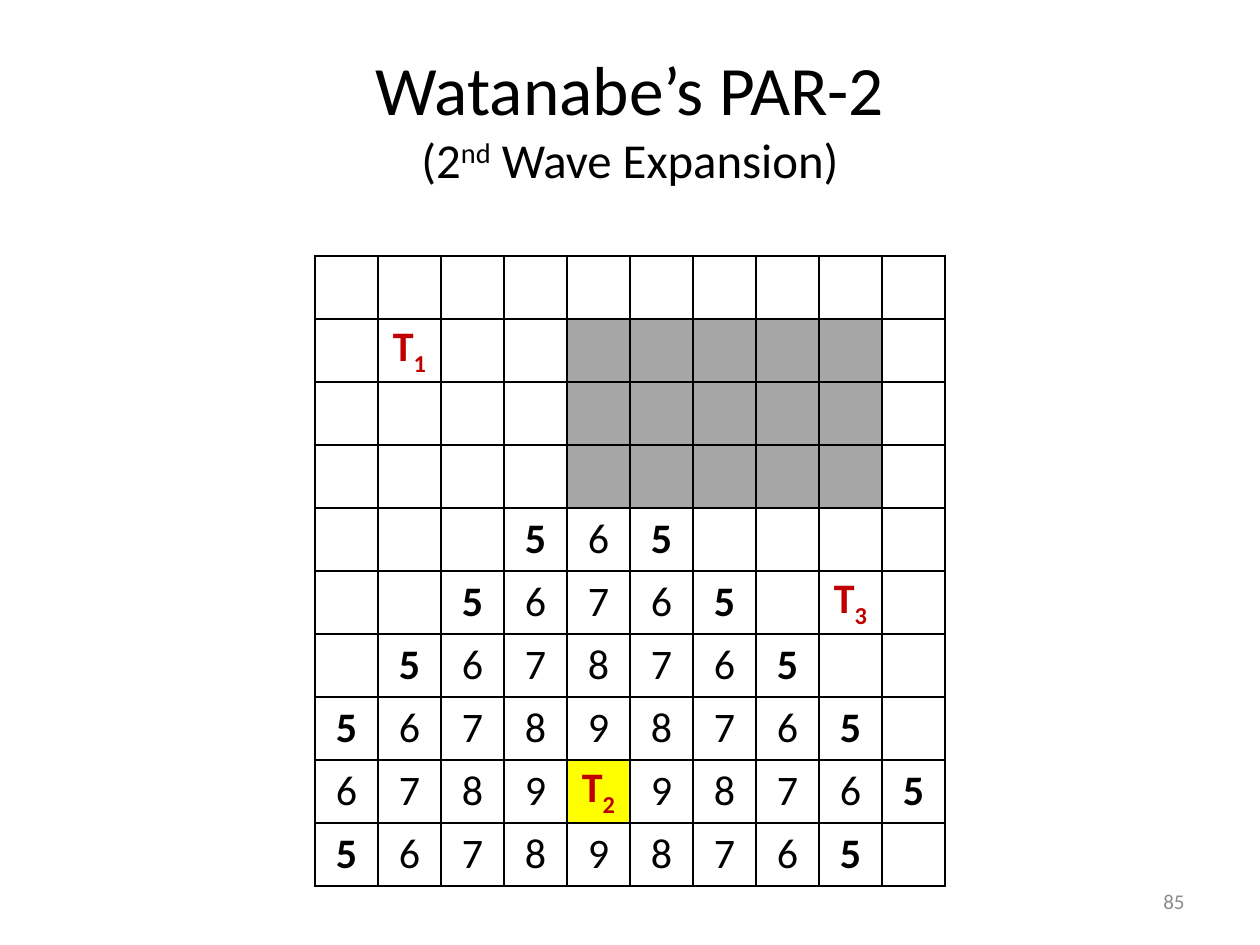
from lxml import etree
from pptx import Presentation
from pptx import util as u
from pptx.dml.color import RGBColor
from pptx.enum import text
from pptx.oxml.ns import qn

PX = u.Inches(1) / 126
FONT = "Calibri"
COLORS = {
    "ink": "000000",
    "terminal": "C00000",
    "free": "FFFFFF",
    "blocked": "A6A6A6",
    "source": "FFFF00",
    "number": "8C8C8C",
}
SIZE = 10
WAVE_START = 10
WAVE_FRONT = 5
SOURCE = (8, 4)
TERMINALS = {(1, 1): "1", SOURCE: "2", (5, 8): "3"}
BLOCKED_ROWS = range(1, 4)
BLOCKED_COLUMNS = range(4, 9)


def px(length):
    """Turn whole px into EMU."""
    return u.Emu(round(length * PX))


def add_span(para, words, size, color="ink", bold=False, baseline=0):
    """Append a formatted run; baseline is a percentage shift."""
    span = para.add_run()
    span.text = words
    span.font.name = FONT
    span.font.size = u.Pt(size)
    span.font.bold = bold
    span.font.color.rgb = RGBColor.from_string(COLORS[color])
    if baseline:
        span._r.get_or_add_rPr().set("baseline", str(baseline * 1000))


def add_text_box(page, box, align):
    """Place a wrapped, vertically centred text box and return its paragraph."""
    frame = page.shapes.add_textbox(*map(px, box)).text_frame
    frame.word_wrap = True
    frame.vertical_anchor = text.MSO_ANCHOR.MIDDLE
    para = frame.paragraphs[0]
    para.alignment = align
    return para


def add_title(page, box):
    """Write the title and its smaller second line."""
    para = add_text_box(page, box, text.PP_ALIGN.CENTER)
    add_span(para, "Watanabe’s PAR-2", 39.6)
    para.add_line_break()
    add_span(para, "(2", 27.9)
    add_span(para, "nd", 27.9, baseline=30)
    add_span(para, " Wave Expansion)", 27.9)


def add_page_number(page, box):
    """Write the page number."""
    para = add_text_box(page, box, text.PP_ALIGN.RIGHT)
    add_span(para, "85", 12, "number")


def add_borders(cell):
    """Draw a solid line on each side of a cell."""
    properties = cell._tc.get_or_add_tcPr()
    for side in ("lnL", "lnR", "lnT", "lnB"):
        line = etree.SubElement(properties, qn(f"a:{side}"), w=str(u.Pt(1.5)))
        fill = etree.SubElement(line, qn("a:solidFill"))
        etree.SubElement(fill, qn("a:srgbClr"), val=COLORS["ink"])


def is_blocked(row, column):
    """Tell whether a cell belongs to the obstacle."""
    return row in BLOCKED_ROWS and column in BLOCKED_COLUMNS


def fill_name(row, column):
    """Choose the fill of a cell."""
    if (row, column) == SOURCE:
        return "source"
    return "blocked" if is_blocked(row, column) else "free"


def write_cell(para, row, column):
    """Write a terminal or the wave value, which drops with distance."""
    value = WAVE_START - abs(row - SOURCE[0]) - abs(column - SOURCE[1])
    if (row, column) in TERMINALS:
        add_span(para, "T", 24, "terminal", True)
        add_span(para, TERMINALS[row, column], 24, "terminal", True, -25)
    elif value >= WAVE_FRONT and not is_blocked(row, column):
        add_span(para, str(value), 24, bold=value == WAVE_FRONT)


def add_wave_grid(page, box):
    """Place the routing grid with its obstacle, terminals and wave."""
    grid = page.shapes.add_table(SIZE, SIZE, *map(px, box)).table
    grid.first_row = grid.horz_banding = False
    for column in grid.columns:
        column.width = px(box[2] // SIZE)
    for line in grid.rows:
        line.height = px(box[3] // SIZE)
    for index, cell in enumerate(grid.iter_cells()):
        row, column = divmod(index, SIZE)
        cell.margin_left = cell.margin_right = 0
        cell.margin_top = cell.margin_bottom = 0
        cell.vertical_anchor = text.MSO_ANCHOR.MIDDLE
        add_borders(cell)
        cell.fill.solid()
        cell.fill.fore_color.rgb = RGBColor.from_string(COLORS[fill_name(row, column)])
        para = cell.text_frame.paragraphs[0]
        para.alignment = text.PP_ALIGN.CENTER
        write_cell(para, row, column)


def main():
    """Build the slide and save it."""
    deck = Presentation()
    deck.slide_width, deck.slide_height = px(1260), px(945)
    page = deck.slides.add_slide(deck.slide_layouts[6])
    add_title(page, (63, 38, 1134, 158))
    add_wave_grid(page, (315, 256, 630, 630))
    add_page_number(page, (903, 876, 294, 50))
    deck.save("out.pptx")


if __name__ == "__main__":
    main()
